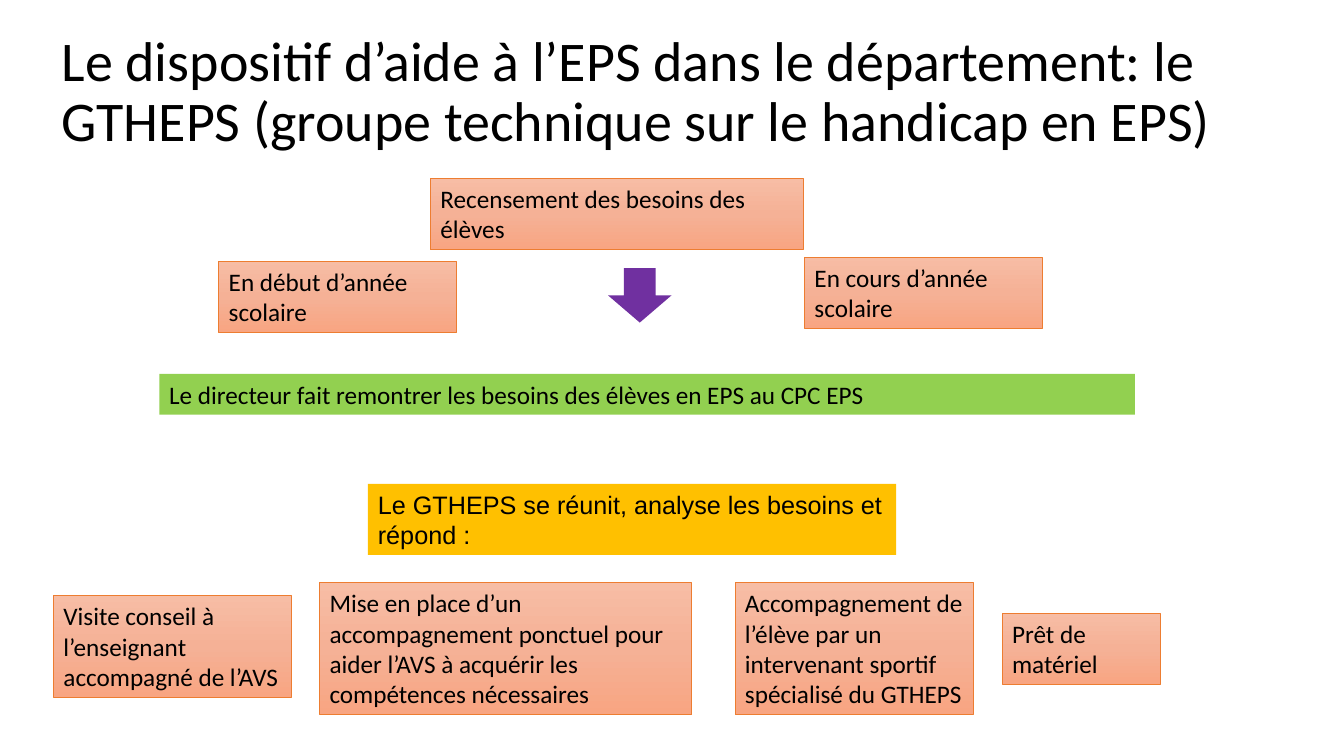
from copy import deepcopy
from dataclasses import dataclass

from pptx import Presentation
from pptx import util as u
from pptx.dml.color import RGBColor
from pptx.enum import shapes, text


@dataclass(frozen=True)
class Theme:
    ink: str = "000000"
    arrow: str = "7030A0"
    relay: str = "92D050"
    meeting: str = "FFC000"
    outline: str = "ED7D31"
    gradient: tuple = ("F7BDA5", "F5B196", "F8A582")
    font: str = "Calibri"
    meeting_font: str = "Arial"
    title_size: int = 40
    body_size: int = 18
    outline_width: float = 0.5


THEME = Theme()
WIDTH, HEIGHT = u.Inches(13.33), u.Inches(7.5)
LINE_SHARE, PADDING_SHARE = 4.03, 1.35

STEPS = [
    ("Recensement des besoins des élèves", 32.03, 23.6, 27.75, 2),
    ("En début d’année scolaire", 16.28, 34.53, 17.7, 2),
    ("En cours d’année scolaire", 59.86, 34, 17.7, 2),
]
ANSWERS = [
    ("Visite conseil à l’enseignant accompagné de l’AVS", 3.98, 78.8, 17.7, 3),
    ("Mise en place d’un accompagnement ponctuel pour aider l’AVS à acquérir "
     "les compétences nécessaires", 23.78, 77.07, 27.7, 4),
    ("Accompagnement de l’élève par un intervenant sportif spécialisé du GTHEPS",
     54.69, 77.07, 17.7, 4),
    ("Prêt de matériel", 74.57, 81.07, 11.78, 2),
]


def color(value):
    return RGBColor.from_string(value)


def area(left, top, width, height):
    return [round(share / 100 * side) for share, side in
            zip((left, top, width, height), (WIDTH, HEIGHT, WIDTH, HEIGHT))]


def write(frame, wording, size, font):
    frame.text = wording
    frame.word_wrap = True
    paragraph = frame.paragraphs[0]
    paragraph.alignment = text.PP_ALIGN.LEFT
    for run in paragraph.runs:
        run.font.size = u.Pt(size)
        run.font.name = font
        run.font.color.rgb = color(THEME.ink)
    return paragraph


def add_title(slide, wording):
    title = slide.shapes.title
    title.left, title.top, title.width, title.height = area(3.83, 2.67, 93.85, 19.33)
    paragraph = write(title.text_frame, wording, THEME.title_size, THEME.font)
    paragraph.line_spacing = 0.9
    title.text_frame.vertical_anchor = text.MSO_ANCHOR.MIDDLE
    title.text_frame.auto_size = text.MSO_AUTO_SIZE.NONE


def add_shape(slide, kind, place, fill=None):
    shape = slide.shapes.add_shape(kind, *place)
    shape.shadow.inherit = False
    if fill:
        shape.fill.solid()
        shape.fill.fore_color.rgb = color(fill)
        shape.line.fill.background()
    else:
        apply_gradient(shape.fill)
        shape.line.color.rgb = color(THEME.outline)
        shape.line.width = u.Pt(THEME.outline_width)
    return shape


def apply_gradient(fill):
    fill.gradient()
    fill.gradient_angle = 270
    stop_list = fill._fill._gradFill.gsLst
    stop_list.insert(1, deepcopy(stop_list[0]))
    for index, (stop, value) in enumerate(zip(fill.gradient_stops, THEME.gradient)):
        stop.position = index / 2
        stop.color.rgb = color(value)


def add_box(slide, wording, left, top, width, lines, fill=None, font=THEME.font):
    height = PADDING_SHARE + LINE_SHARE * lines
    box = add_shape(slide, shapes.MSO_SHAPE.RECTANGLE, area(left, top, width, height), fill)
    write(box.text_frame, wording, THEME.body_size, font)
    box.text_frame.vertical_anchor = text.MSO_ANCHOR.TOP
    box.text_frame.auto_size = text.MSO_AUTO_SIZE.SHAPE_TO_FIT_TEXT


def main():
    presentation = Presentation()
    presentation.slide_width, presentation.slide_height = WIDTH, HEIGHT
    slide = presentation.slides.add_slide(presentation.slide_layouts[5])
    add_title(slide, "Le dispositif d’aide à l’EPS dans le département: le GTHEPS "
                     "(groupe technique sur le handicap en EPS)")
    for step in STEPS:
        add_box(slide, *step)
    add_box(slide, "Le directeur fait remontrer les besoins des élèves en EPS au CPC EPS",
            11.85, 49.47, 72.6, 1, THEME.relay)
    add_box(slide, "Le GTHEPS se réunit, analyse les besoins et répond :",
            27.38, 64, 39.3, 2, THEME.meeting, THEME.meeting_font)
    for answer in ANSWERS:
        add_box(slide, *answer)
    add_shape(slide, shapes.MSO_SHAPE.DOWN_ARROW, area(45.24, 35.47, 4.73, 7.2), THEME.arrow)
    presentation.save("out.pptx")


if __name__ == "__main__":
    main()
